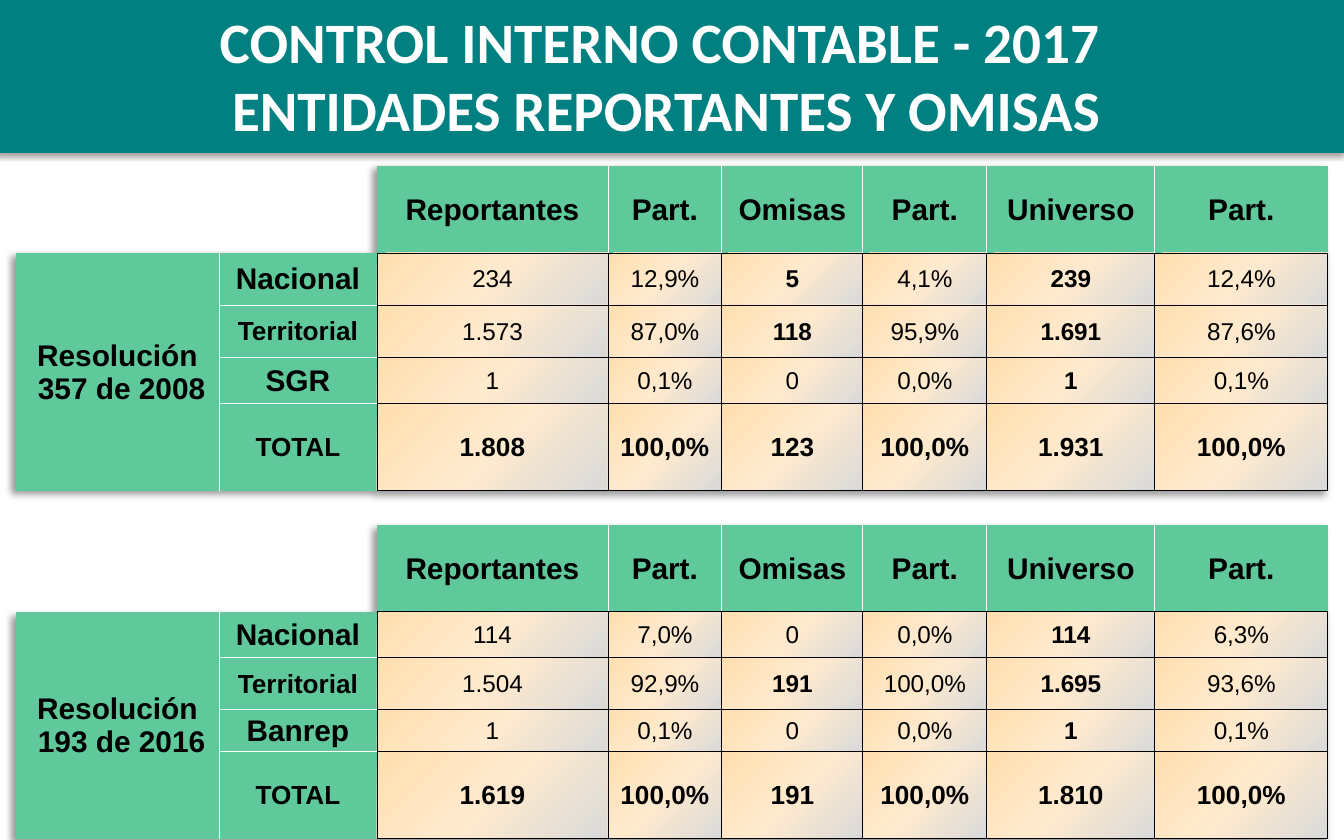
from lxml import etree
from pptx import Presentation
from pptx import util as u
from pptx.dml.color import RGBColor
from pptx.enum import shapes, text
from pptx.oxml.ns import qn

SCALE = 914400 / 134.4
COLORS = {
    "teal": "008080",
    "green": "60C99C",
    "white": "FFFFFF",
    "black": "000000",
    "peach": "FFDFAF",
    "cream": "FFEACE",
    "gray": "D9D9D9",
}
COLS = [203, 158, 231, 114, 141, 124, 168, 173]
HEADERS = ["Reportantes", "Part.", "Omisas", "Part.", "Universo", "Part."]
BLOCKS = [
    (["Resolución", " 357 de 2008"], [87, 52, 53, 46, 87], [
        ["Nacional", "234", "12,9%", "5", "4,1%", "239", "12,4%"],
        ["Territorial", "1.573", "87,0%", "118", "95,9%", "1.691", "87,6%"],
        ["SGR", "1", "0,1%", "0", "0,0%", "1", "0,1%"],
        ["TOTAL", "1.808", "100,0%", "123", "100,0%", "1.931", "100,0%"],
    ]),
    (["Resolución", " 193 de 2016"], [87, 46, 52, 42, 87], [
        ["Nacional", "114", "7,0%", "0", "0,0%", "114", "6,3%"],
        ["Territorial", "1.504", "92,9%", "191", "100,0%", "1.695", "93,6%"],
        ["Banrep", "1", "0,1%", "0", "0,0%", "1", "0,1%"],
        ["TOTAL", "1.619", "100,0%", "191", "100,0%", "1.810", "100,0%"],
    ]),
]
GAP = 34


def px(n):
    return u.Emu(round(n * SCALE))


def sub(parent, tag, **attrs):
    return etree.SubElement(parent, qn("a:" + tag), {k: str(v) for k, v in attrs.items()})


def assign(obj, values):
    for name, value in values.items():
        setattr(obj, name, value)


class Deck:
    def __init__(self, width, height):
        self.prs = Presentation()
        assign(self.prs, {"slide_width": px(width), "slide_height": px(height)})
        self.s = self.prs.slides.add_slide(self.prs.slide_layouts[6])

    def color(self, name):
        return RGBColor.from_string(COLORS[name])

    def paragraph(self, p, value, font, size, bold, color):
        p.text = value
        p.alignment = text.PP_ALIGN.CENTER
        for r in p.runs:
            assign(r.font, {"name": font, "size": u.Pt(size), "bold": bold})
            r.font.color.rgb = self.color(color)

    def shadow(self, effects, blur, dist, angle, alpha):
        sh = sub(effects, "outerShdw", blurRad=u.Pt(blur), dist=u.Pt(dist),
                 dir=angle * 60000, algn="t", rotWithShape=0)
        sub(sub(sh, "srgbClr", val=COLORS["black"]), "alpha", val=alpha * 1000)

    def banner(self, x, y, w, h):
        sp = self.s.shapes.add_shape(shapes.MSO_SHAPE.RECTANGLE, px(x), px(y), px(w), px(h))
        sp.fill.solid()
        sp.fill.fore_color.rgb = self.color("teal")
        sp.line.fill.background()
        sp.shadow.inherit = False
        self.shadow(sp._element.spPr.find(qn("a:effectLst")), 3.1, 1.6, 90, 38)

    def title(self, value, x, y, w, h):
        tf = self.s.shapes.add_textbox(px(x), px(y), px(w), px(h)).text_frame
        assign(tf, {"word_wrap": True, "vertical_anchor": text.MSO_ANCHOR.TOP,
                    "margin_top": px(9), "margin_bottom": 0})
        self.paragraph(tf.paragraphs[0], value, "Calibri", 30.6, True, "white")

    def table(self, x, y, cols, rows):
        sp = self.s.shapes.add_table(len(rows), len(cols), px(x), px(y),
                                     px(sum(cols)), px(sum(rows)))
        tbl = sp.table
        assign(tbl, {"first_row": False, "horz_banding": False})
        for col, w in zip(tbl.columns, cols):
            col.width = px(w)
        for row, h in zip(tbl.rows, rows):
            row.height = px(h)
        pr = tbl._tbl.tblPr
        pr.find(qn("a:tableStyleId")).text = "{2D5ABB26-0587-4C30-8999-92F81FD0307C}"
        effects = sub(pr, "effectLst")
        pr.insert(0, effects)
        self.shadow(effects, 4, 3, 135, 40)
        return tbl

    def border(self, pr, tag, color):
        ln = sub(pr, tag, w=u.Pt(0.5))
        if color:
            sub(sub(ln, "solidFill"), "srgbClr", val=COLORS[color])
        else:
            sub(ln, "noFill")

    def cell(self, cell, kind, lines, size, bold, edges):
        assign(cell, {"margin_left": px(1), "margin_right": px(1), "margin_top": px(1),
                      "margin_bottom": 0, "vertical_anchor": text.MSO_ANCHOR.MIDDLE})
        tf = cell.text_frame
        for i, line in enumerate(lines):
            p = tf.add_paragraph() if i else tf.paragraphs[0]
            self.paragraph(p, line, "Arial", size, bold, "black")
        if not lines:
            sub(tf.paragraphs[0]._p, "endParaRPr", sz=800)
        pr = cell._tc.get_or_add_tcPr()
        for tag, color in edges.items():
            self.border(pr, tag, color)
        if kind == "body":
            grad = sub(pr, "gradFill", rotWithShape=1)
            stops = sub(grad, "gsLst")
            for pos, name in ((0, "peach"), (50, "cream"), (100, "gray")):
                sub(sub(stops, "gs", pos=pos * 1000), "srgbClr", val=COLORS[name])
            sub(grad, "lin", ang=45 * 60000, scaled=0)
        elif kind:
            cell.fill.solid()
            cell.fill.fore_color.rgb = self.color("green")
        else:
            cell.fill.background()


def body_style(label, col, value):
    if label == "TOTAL":
        return 14, True
    return 13, HEADERS[col] in ("Omisas", "Universo") and value != "0"


def build_grid():
    empty = (None, [], 13, False)
    grid = []
    for group, _, records in BLOCKS:
        if grid:
            grid.append([empty] * len(COLS))
        grid.append([empty] * 2 + [("header", [h], 16, True) for h in HEADERS])
        for n, (label, *values) in enumerate(records):
            size = 14 if label in ("Territorial", "TOTAL") else 16
            grid.append([("group", [] if n else group, 16, True),
                         ("label", [label], size, True)]
                        + [("body", [v], *body_style(label, j, v))
                           for j, v in enumerate(values)])
    return grid


def edge_color(a, b):
    if "body" in (a, b):
        return "black"
    return "white" if a and b and (a, b) != ("group", "group") else None


def main():
    deck = Deck(1344, 840)
    deck.banner(-5, -3, 1349, 156)
    deck.title("CONTROL INTERNO CONTABLE - 2017 \vENTIDADES REPORTANTES Y OMISAS",
               24, -3, 1284, 142)
    grid = build_grid()
    rows = BLOCKS[0][1] + [GAP] + BLOCKS[1][1]
    tbl = deck.table(16, 166, COLS, rows)

    def kind_at(i, j):
        inside = 0 <= i < len(rows) and 0 <= j < len(COLS)
        return grid[i][j][0] if inside else None

    sides = {"lnL": (0, -1), "lnR": (0, 1), "lnT": (-1, 0), "lnB": (1, 0)}
    for i, row in enumerate(grid):
        for j, (kind, *content) in enumerate(row):
            edges = {tag: edge_color(kind, kind_at(i + di, j + dj))
                     for tag, (di, dj) in sides.items()}
            deck.cell(tbl.cell(i, j), kind, *content, edges)
    for top in (1, len(BLOCKS[0][1]) + 2):
        tbl.cell(top, 0).merge(tbl.cell(top + 3, 0))
    deck.prs.save("out.pptx")


if __name__ == "__main__":
    main()
